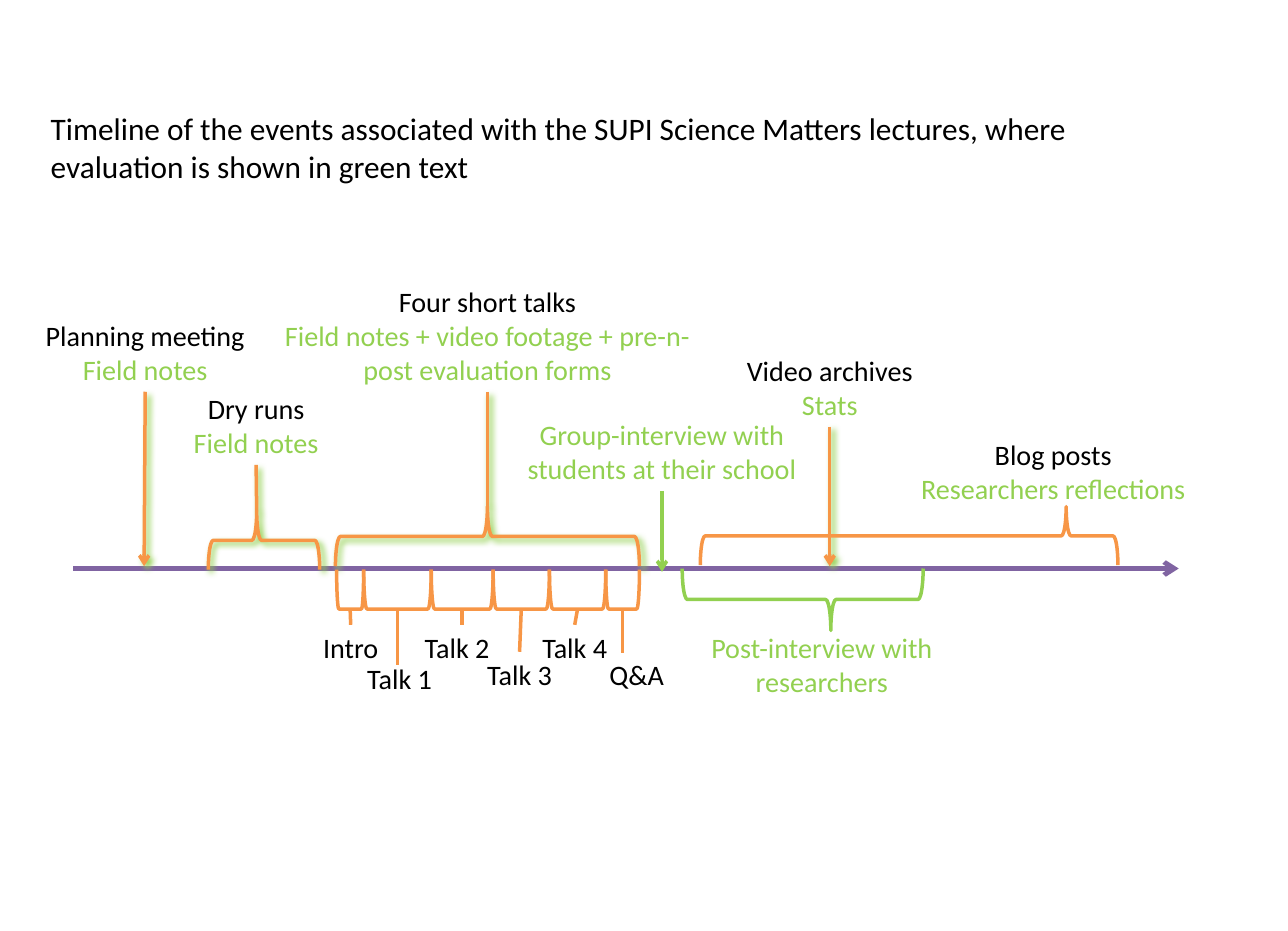
import pptx
import pptx.util
import pptx.oxml
import pptx.oxml.ns
import pptx.dml.color
import pptx.enum.shapes
import pptx.enum.text

Inches, Pt = pptx.util.Inches, pptx.util.Pt
SHAPE = pptx.enum.shapes.MSO_SHAPE
ALIGN = pptx.enum.text.PP_ALIGN
COLORS = {"text": "000000", "green": "92D050", "orange": "F79646", "purple": "8064A2"}
FONT = "Calibri"
BOTTOM, TOP = 2, 0


def rgb(name):
    return pptx.dml.color.RGBColor.from_string(COLORS[name])


def write(tf, lines, size=18, align=ALIGN.CENTER):
    """Fill a text frame with (text, colour) paragraphs."""
    tf.word_wrap = True
    tf.vertical_anchor = pptx.enum.text.MSO_ANCHOR.TOP
    tf.auto_size = pptx.enum.text.MSO_AUTO_SIZE.NONE
    for i, (text, color) in enumerate(lines):
        p = tf.paragraphs[0] if i == 0 else tf.add_paragraph()
        p.alignment = align
        r = p.add_run()
        r.text = text
        r.font.name, r.font.size = FONT, Pt(size)
        r.font.color.rgb = rgb(color)


class Timeline:
    def __init__(self, slide):
        self.slide = slide

    def title(self, text, x, y, w, h):
        sp = self.slide.shapes.title
        sp.left, sp.top, sp.width, sp.height = map(Inches, (x, y, w, h))
        write(sp.text_frame, [(text, "text")], size=20, align=ALIGN.LEFT)

    def label(self, lines, x, y, w, h):
        sp = self.slide.shapes.add_textbox(*map(Inches, (x, y, w, h)))
        write(sp.text_frame, lines)
        return sp

    def outline(self, sp, color, width, glow):
        """Set the line, then either a green shadow or no effect."""
        sp.line.color.rgb = rgb(color)
        sp.line.width = Pt(width)
        ns = pptx.oxml.ns.nsdecls("a")
        shadow = (f'<a:outerShdw blurRad="{Pt(4)}" dist="{Pt(3)}" dir="2700000" algn="tl" '
                  f'rotWithShape="0"><a:srgbClr val="{COLORS["green"]}"/></a:outerShdw>')
        sp._element.spPr.append(pptx.oxml.parse_xml(
            f'<a:effectLst {ns}>{shadow if glow else ""}</a:effectLst>'))

    def line(self, start, end, color="orange", width=2.25, arrow=False, glow=False,
             above=None, below=None):
        """Line, joined to the label above its start or below its end."""
        sp = self.slide.shapes.add_connector(
            pptx.enum.shapes.MSO_CONNECTOR.STRAIGHT, *map(Inches, (*start, *end)))
        if above is not None:
            sp.begin_connect(above, BOTTOM)
        if below is not None:
            sp.end_connect(below, TOP)
        self.outline(sp, color, width, glow)
        if arrow:
            ns = pptx.oxml.ns.nsdecls("a")
            sp.line._get_or_add_ln().append(
                pptx.oxml.parse_xml(f'<a:tailEnd {ns} type="arrow"/>'))

    def span(self, kind, left, right, top, height, turn=270, tip=None,
             color="orange", glow=False):
        """Brace or bracket turned on its side to cover left..right."""
        w = right - left
        cx, cy = (left + right) / 2, top + height / 2
        sp = self.slide.shapes.add_shape(
            kind, Inches(cx - height / 2), Inches(cy - w / 2), Inches(height), Inches(w))
        sp.rotation = turn
        sp.fill.background()
        if tip is not None:
            sp.adjustments[1] = (tip - left) / w
        self.outline(sp, color, 2.25, glow)


def main():
    prs = pptx.Presentation()
    prs.slide_width, prs.slide_height = Inches(11.44), Inches(8.27)
    s = prs.slides.add_slide(prs.slide_layouts[5])
    t = Timeline(s)

    t.title("Timeline of the events associated with the SUPI Science Matters lectures, "
            "where evaluation is shown in green text", 0.35, 0.92, 9.37, 0.78)

    # Time axis
    t.line((0.65, 5.05), (10.47, 5.05), "purple", 3, arrow=True)

    # Events above the axis: lines, box, line end, line format
    events = [
        ([("Planning meeting", "text"), ("Field notes", "green")],
         (0.21, 2.78, 2.16, 0.7), (1.28, 5.03), dict(arrow=True, glow=True)),
        ([("Dry runs", "text"), ("Field notes", "green")],
         (1.53, 3.43, 1.49, 0.7), (2.28, 4.54), dict(glow=True)),
        ([("Four short talks", "text"),
          ("Field notes + video footage + pre-n-post evaluation forms", "green")],
         (2.41, 2.48, 3.84, 1), (4.33, 4.5), dict(glow=True)),
        ([("Group-interview with students at their school", "green")],
         (4.46, 3.66, 2.84, 0.7), (5.88, 5.08), dict(arrow=True, color="green")),
        ([("Video archives", "text"), ("Stats", "green")],
         (6.38, 3.09, 1.98, 0.7), (7.37, 5.03), dict(arrow=True, glow=True)),
    ]
    for lines, box, end, style in events:
        x, y, w, h = box
        sp = t.label(lines, *box)
        t.line((x + w / 2, y + h), end, above=sp, **style)
    t.label([("Blog posts", "text"), ("Researchers reflections", "green")],
            7.86, 3.84, 2.99, 0.71)
    t.label([("Post-interview with researchers", "green")], 6.06, 5.55, 2.48, 0.71)

    # Braces for events that last
    t.span(SHAPE.RIGHT_BRACE, 1.85, 2.84, 4.54, 0.52, tip=2.28, glow=True)
    t.span(SHAPE.RIGHT_BRACE, 2.98, 5.68, 4.5, 0.53, glow=True)
    t.span(SHAPE.RIGHT_BRACE, 6.22, 9.93, 4.5, 0.52, tip=9.47)
    t.span(SHAPE.LEFT_BRACE, 6.06, 8.2, 5.05, 0.55, tip=7.38, color="green")

    # Parts of the lecture: name, bracket right edge, stem end, label box
    parts = [
        ("Intro", 3.23, 5.55, (2.68, 5.55, 0.87)),
        ("Talk 1", 3.83, 5.91, (3.07, 5.83, 0.96)),
        ("Talk 2", 4.38, 5.55, (3.56, 5.55, 1)),
        ("Talk 3", 4.88, 5.8, (4.19, 5.79, 0.85)),
        ("Talk 4", 5.38, 5.55, (4.67, 5.55, 0.87)),
        ("Q&A", 5.68, 5.8, (5.25, 5.79, 0.81)),
    ]
    left = 2.99
    for name, right, stem_end, (x, y, w) in parts:
        sp = t.label([(name, "text")], x, y, w, 0.41)
        t.span(SHAPE.RIGHT_BRACKET, left, right, 5.06, 0.35, turn=90)
        mid = (left + right) / 2
        centred = abs(x + w / 2 - mid) < 0.03 and abs(y - stem_end) < 0.02
        t.line((mid, 5.41), (mid, stem_end), below=sp if centred else None)
        left = right

    prs.save("out.pptx")


if __name__ == "__main__":
    main()
